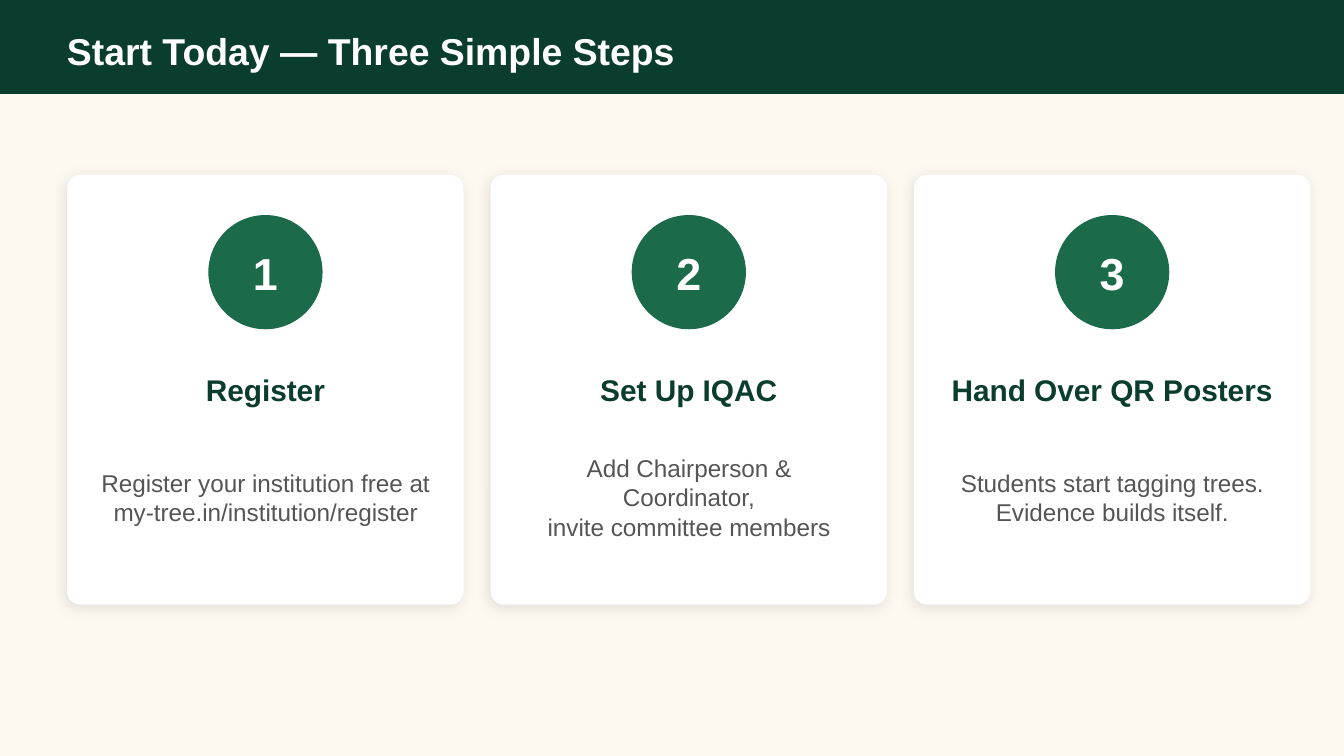
from lxml import etree
from pptx import Presentation
from pptx.dml.color import RGBColor
from pptx.enum import shapes, text
from pptx.oxml import ns
from pptx.util import Pt

TITLE = "Start Today — Three Simple Steps"
STEPS = [
    ("Register", ["Register your institution free at", "my-tree.in/institution/register"]),
    ("Set Up IQAC", ["Add Chairperson & Coordinator,", "invite committee members"]),
    ("Hand Over QR Posters", ["Students start tagging trees.", "Evidence builds itself."]),
]

CREAM = RGBColor(0xFD, 0xF8, 0xF0)
DARK_GREEN = RGBColor(0x0B, 0x3D, 0x2E)
GREEN = RGBColor(0x1B, 0x6B, 0x4A)
WHITE = RGBColor(0xFF, 0xFF, 0xFF)
GRAY = RGBColor(0x55, 0x55, 0x55)
BLACK = RGBColor(0, 0, 0)

FONT = "Arial"
SLIDE_WIDTH, SLIDE_HEIGHT = 720, 405
CARD_LEFT, CARD_TOP, CARD_WIDTH, CARD_HEIGHT = 36, 93.6, 212.4, 230.4
CARD_GAP = 14.4
CARD_PADDING = 10.8
CIRCLE_SIZE = 61.2


def add_shape(slide, kind, left, top, width, height, color):
    shape = slide.shapes.add_shape(kind, Pt(left), Pt(top), Pt(width), Pt(height))
    shape.fill.solid()
    shape.fill.fore_color.rgb = color
    shape.line.fill.background()
    shape.shadow.inherit = False
    return shape


def add_soft_shadow(shape):
    effects = shape._element.spPr.find(ns.qn("a:effectLst"))
    shadow = etree.SubElement(
        effects, ns.qn("a:outerShdw"), blurRad=str(Pt(8)), dist=str(Pt(2)),
        dir=str(135 * 60000), algn="bl", rotWithShape="0")
    color = etree.SubElement(shadow, ns.qn("a:srgbClr"), val=str(BLACK))
    etree.SubElement(color, ns.qn("a:alpha"), val="10000")


def add_text(slide, lines, left, top, width, height, size, color, bold=False,
             align=text.PP_ALIGN.CENTER):
    box = slide.shapes.add_textbox(Pt(left), Pt(top), Pt(width), Pt(height))
    frame = box.text_frame
    frame.word_wrap = True
    frame.vertical_anchor = text.MSO_ANCHOR.MIDDLE
    for index, line in enumerate(lines):
        paragraph = frame.add_paragraph() if index else frame.paragraphs[0]
        paragraph.alignment = align
        run = paragraph.add_run()
        run.text = line
        run.font.name = FONT
        run.font.size = Pt(size)
        run.font.bold = bold
        run.font.color.rgb = color


def add_step(slide, index, heading, lines):
    left = CARD_LEFT + index * (CARD_WIDTH + CARD_GAP)
    card = add_shape(slide, shapes.MSO_SHAPE.ROUNDED_RECTANGLE,
                     left, CARD_TOP, CARD_WIDTH, CARD_HEIGHT, WHITE)
    card.adjustments[0] = 0.034
    add_soft_shadow(card)

    circle_left = left + (CARD_WIDTH - CIRCLE_SIZE) / 2
    add_shape(slide, shapes.MSO_SHAPE.OVAL,
              circle_left, 115.2, CIRCLE_SIZE, CIRCLE_SIZE, GREEN)
    add_text(slide, [str(index + 1)], circle_left, 126, CIRCLE_SIZE, 39.6, 24, WHITE, True)

    text_left = left + CARD_PADDING
    text_width = CARD_WIDTH - 2 * CARD_PADDING
    add_text(slide, [heading], text_left, 194.4, text_width, 28.8, 16, DARK_GREEN, True)
    add_text(slide, lines, text_left, 234, text_width, 64.8, 13, GRAY)


def main():
    presentation = Presentation()
    presentation.slide_width = Pt(SLIDE_WIDTH)
    presentation.slide_height = Pt(SLIDE_HEIGHT)
    slide = presentation.slides.add_slide(presentation.slide_layouts[6])
    slide.background.fill.solid()
    slide.background.fill.fore_color.rgb = CREAM

    add_shape(slide, shapes.MSO_SHAPE.RECTANGLE, 0, 0, SLIDE_WIDTH, 50.4, DARK_GREEN)
    add_text(slide, [TITLE], 28.8, 12.96, 648, 28.8, 20, WHITE, True, text.PP_ALIGN.LEFT)
    for index, (heading, lines) in enumerate(STEPS):
        add_step(slide, index, heading, lines)

    presentation.save("out.pptx")


if __name__ == "__main__":
    main()
